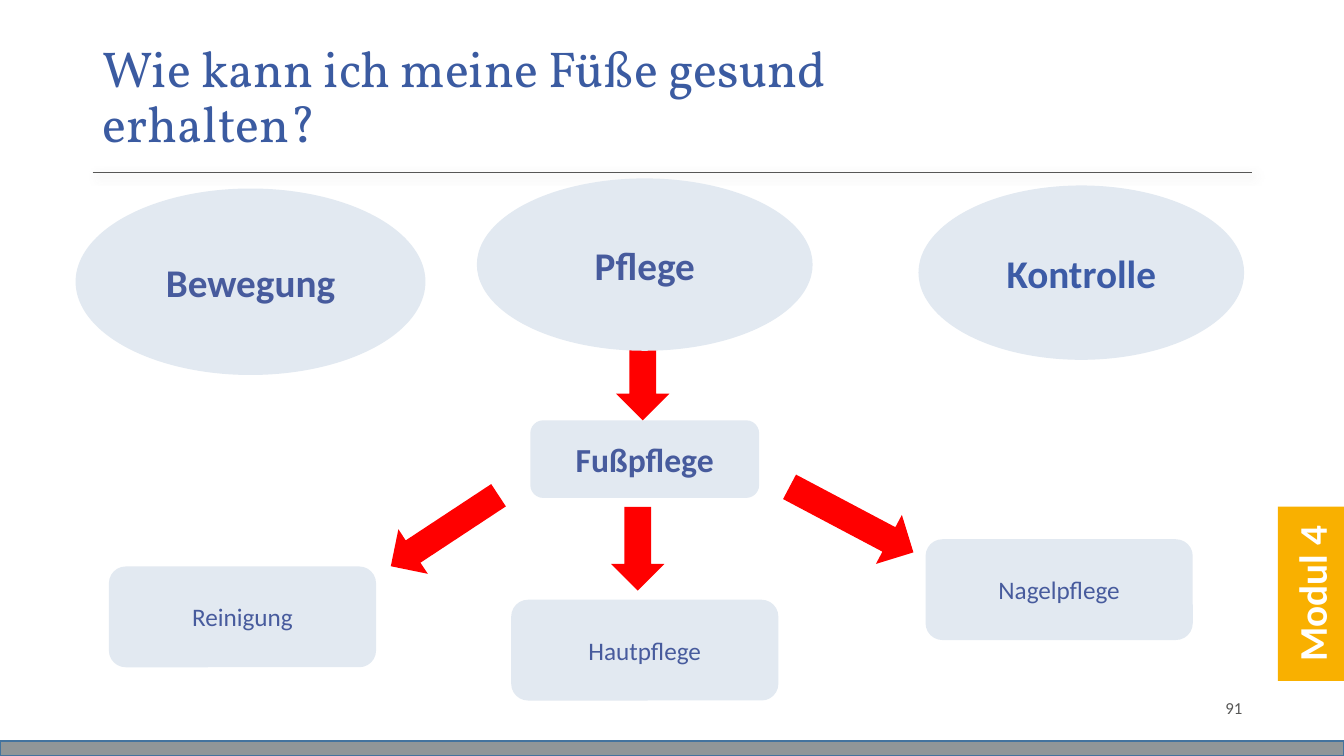
import pptx
import pptx.util
import pptx.dml.color
import pptx.oxml
import pptx.oxml.ns
from pptx.enum.shapes import MSO_CONNECTOR, MSO_SHAPE
from pptx.enum.text import MSO_ANCHOR, PP_ALIGN

Inches, Pt = pptx.util.Inches, pptx.util.Pt

TITLE = "Wie kann ich meine Füße gesund erhalten?"
PAGE_NUMBER = "91"
PALE, INK, RED, GREY = "E2E9F1", "475B9D", "FF0000", "575756"

# text, (left, top, width, height), text colour
PILLARS = [
    ("Pflege", (4.73, 1.77, 3.33, 1.71), INK),
    ("Bewegung", (0.75, 1.87, 3.47, 1.85), INK),
    ("Kontrolle", (9.11, 1.84, 3.23, 1.73), "3C5BA6"),
]
FOOT_CARE = ("Fußpflege", (5.26, 4.17, 2.27, 0.77))
CARE_SIZE = (2.65, 1)
CARE_STEPS = [
    ("Reinigung", (1.08, 5.62)),
    ("Nagelpflege", (9.18, 5.35)),
    ("Hautpflege", (5.07, 5.95)),
]
# preset, (left, top, width, height), rotation
ARROWS = [
    (MSO_SHAPE.DOWN_ARROW, (6.11, 3.12, 0.53, 1.05), 0),
    (MSO_SHAPE.RIGHT_ARROW, (3.77, 5, 1.28, 0.53), 146.6),
    (MSO_SHAPE.RIGHT_ARROW, (7.75, 4.88, 1.39, 0.55), 27.9),
    (MSO_SHAPE.RIGHT_ARROW, (5.91, 5.18, 0.83, 0.53), 90),
]
MODULE_TAB = ("Modul 4", (12.14, 5.56, 1.73, 0.66))
RULE_SHADOW = (
    f'<a:effectLst {pptx.oxml.ns.nsdecls("a")}>'
    '<a:outerShdw blurRad="88900" dist="38100" dir="2700000" algn="tl" rotWithShape="0">'
    f'<a:srgbClr val="{GREY}"><a:alpha val="50000"/></a:srgbClr>'
    '</a:outerShdw></a:effectLst>'
)


def rgb(value):
    return pptx.dml.color.RGBColor.from_string(value)


def write(shape, text, size, color, bold=False, align=PP_ALIGN.CENTER,
          anchor=MSO_ANCHOR.MIDDLE, font="Calibri"):
    frame = shape.text_frame
    frame.text = text
    frame.word_wrap = True
    frame.vertical_anchor = anchor
    paragraph = frame.paragraphs[0]
    paragraph.alignment = align
    paragraph.font.name = font
    paragraph.font.size = Pt(size)
    paragraph.font.bold = bold
    paragraph.font.color.rgb = rgb(color)
    return paragraph


def add_block(slide, preset, box, fill, rotation=0):
    """Add a flat, borderless preset shape."""
    block = slide.shapes.add_shape(preset, *map(Inches, box))
    block.shadow.inherit = False
    block.fill.solid()
    block.fill.fore_color.rgb = rgb(fill)
    block.line.fill.background()
    block.rotation = rotation
    return block


def main():
    deck = pptx.Presentation()
    deck.slide_width, deck.slide_height = Inches(13.33), Inches(7.5)
    slide = deck.slides.add_slide(deck.slide_layouts[5])

    footer = add_block(slide, MSO_SHAPE.RECTANGLE, (0, 7.35, 13.33, 0.15), "909698")
    footer.line.color.rgb = rgb("43739E")
    footer.line.width = Pt(1)

    rule = slide.shapes.add_connector(
        MSO_CONNECTOR.STRAIGHT, *map(Inches, (0.92, 1.71, 12.42, 1.71)))
    rule.line.color.rgb = rgb(GREY)
    rule.line.width = Pt(0.5)
    rule._element.spPr.append(pptx.oxml.parse_xml(RULE_SHADOW))

    number = slide.shapes.add_textbox(*map(Inches, (9.42, 6.82, 3, 0.4)))
    write(number, PAGE_NUMBER, 12, GREY, align=PP_ALIGN.RIGHT)

    title = slide.shapes.title
    title.left, title.top, title.width, title.height = map(
        Inches, (0.92, 0.39, 8.66, 1.18))
    heading = write(title, TITLE, 36, "3B5BA1", align=PP_ALIGN.LEFT,
                    anchor=MSO_ANCHOR.TOP, font="Vollkorn")
    heading.line_spacing = 0.9

    text, box = FOOT_CARE
    write(add_block(slide, MSO_SHAPE.ROUNDED_RECTANGLE, box, PALE), text, 24, INK, bold=True)
    for text, corner in CARE_STEPS:
        step = add_block(slide, MSO_SHAPE.ROUNDED_RECTANGLE, corner + CARE_SIZE, PALE)
        write(step, text, 18, INK)

    for preset, box, rotation in ARROWS:
        add_block(slide, preset, box, RED, rotation)

    for text, box, color in PILLARS:
        write(add_block(slide, MSO_SHAPE.OVAL, box, PALE), text, 28, color, bold=True)

    text, box = MODULE_TAB
    tab = add_block(slide, MSO_SHAPE.RECTANGLE, box, "F9B000", rotation=270)
    write(tab, text, 28, "FFFFFF", bold=True)

    deck.save("out.pptx")


if __name__ == "__main__":
    main()
